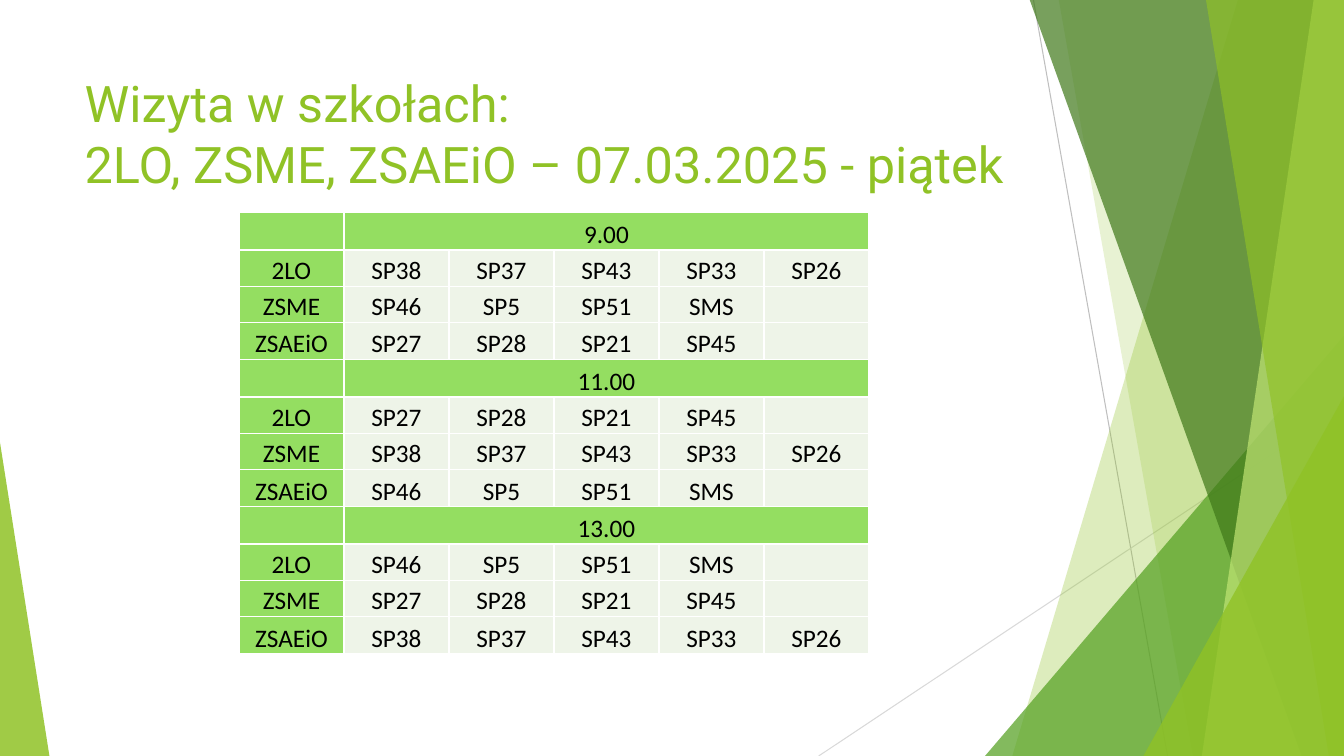
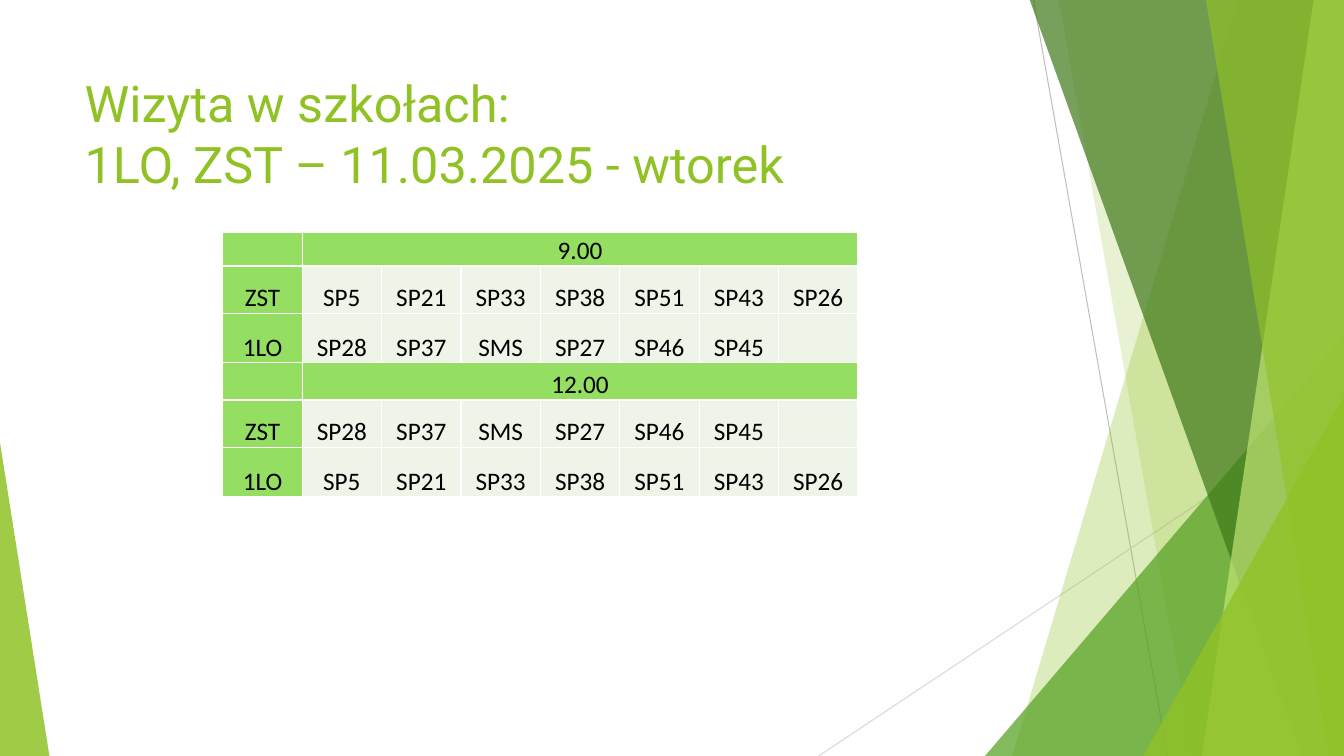
from dataclasses import dataclass

from lxml import etree
from pptx import Presentation
from pptx.dml.color import RGBColor
from pptx.enum.shapes import MSO_CONNECTOR, MSO_SHAPE
from pptx.enum.text import MSO_ANCHOR, MSO_AUTO_SIZE, PP_ALIGN
from pptx.oxml.ns import qn
from pptx.util import Inches, Pt

STRAIGHT = MSO_CONNECTOR.STRAIGHT
TRIANGLE = MSO_SHAPE.ISOSCELES_TRIANGLE
LEFT, CENTER = PP_ALIGN.LEFT, PP_ALIGN.CENTER
TOP, BOTTOM = MSO_ANCHOR.TOP, MSO_ANCHOR.BOTTOM
NO_AUTOFIT = MSO_AUTO_SIZE.NONE


@dataclass(frozen=True)
class Theme:
    lime: str = "90C226"
    green: str = "54A021"
    forest: str = "3F7819"
    pale_lime: str = "C0E474"
    grey: str = "BFBFBF"
    light_grey: str = "D9D9D9"
    header_fill: str = "94DE61"
    body_fill: str = "EEF4E8"
    border: str = "FFFFFF"
    text: str = "000000"
    title_font: str = "Roboto"
    table_font: str = "Calibri"
    title_size: int = 36
    table_size: int = 18
    hairline: float = 0.75
    border_width: int = 1


THEME = Theme()
WIDTH, HEIGHT = 13.33, 7.5
BAND_TOP = -0.01
TITLE_BOX = (0.74, 0.67, 9.4, 1.44)

# Groups of primary schools that visit together
FRIDAY_A = ["SP38", "SP37", "SP43", "SP33", "SP26"]
FRIDAY_B = ["SP46", "SP5", "SP51", "SMS"]
FRIDAY_C = ["SP27", "SP28", "SP21", "SP45"]
TUESDAY_A = ["SP5", "SP21", "SP33", "SP38", "SP51", "SP43", "SP26"]
TUESDAY_B = ["SP28", "SP37", "SMS", "SP27", "SP46", "SP45"]

VISITS = [
    {
        "title": "Wizyta w szkołach:\v2LO, ZSME, ZSAEiO – 07.03.2025 - piątek",
        "hosts": ["2LO", "ZSME", "ZSAEiO"],
        "sessions": [
            ("9.00", [FRIDAY_A, FRIDAY_B, FRIDAY_C]),
            ("11.00", [FRIDAY_C, FRIDAY_A, FRIDAY_B]),
            ("13.00", [FRIDAY_B, FRIDAY_C, FRIDAY_A]),
        ],
        "table_at": (2.37, 2.11),
        "table_width": 6.25,
        "row_heights": [0.37, 0.36, 0.36, 0.37] * 3,
    },
    {
        "title": "Wizyta w szkołach:\v1LO, ZST – 11.03.2025 - wtorek",
        "hosts": ["ZST", "1LO"],
        "sessions": [
            ("9.00", [TUESDAY_A, TUESDAY_B]),
            ("12.00", [TUESDAY_B, TUESDAY_A]),
        ],
        "table_at": (2.21, 2.31),
        "table_width": 6.3,
        "row_heights": [0.33, 0.47, 0.49, 0.37, 0.47, 0.49],
    },
]

# Background, from back to front
RAYS = [
    ((10.25, 0), (11.58, HEIGHT), THEME.grey),
    ((WIDTH, 4.03), (8.12, HEIGHT), THEME.light_grey),
]
# band: top-left x, bottom-left x, colour, opacity in percent
# wedge: left, top, width, apex position, colour, opacity in percent
FACETS = [
    ("band", 12.28, 10.04, THEME.lime, 30),
    ("band", 10.5, 11.83, THEME.lime, 20),
    ("wedge", 9.77, 3.33, 3.56, 1, THEME.green, 72),
    ("band", 10.21, 12.91, THEME.forest, 70),
    ("band", 13.03, 11.92, THEME.pale_lime, 70),
    ("band", 11.96, 13.18, THEME.lime, 65),
    ("wedge", 11.34, 3.93, 1.99, 1, THEME.lime, 80),
    ("wedge", 0, 4.39, 0.49, 0, THEME.lime, 85),
]


def rgb(color):
    return RGBColor.from_string(color)


def inches(*lengths):
    return tuple(Inches(length) for length in lengths)


def add_ray(shapes, start, end, color):
    ray = shapes.add_connector(STRAIGHT, *inches(*start, *end))
    ray.line.color.rgb = rgb(color)
    ray.line.width = Pt(THEME.hairline)
    etree.SubElement(ray.element.spPr, qn("a:effectLst"))
    return ray


def add_band(shapes, top_x, bottom_x):
    outline = shapes.build_freeform(*inches(top_x, BAND_TOP))
    corners = [(WIDTH, BAND_TOP), (WIDTH, HEIGHT), (bottom_x, HEIGHT)]
    outline.add_line_segments([inches(*corner) for corner in corners], close=True)
    return outline.convert_to_shape()


def add_wedge(shapes, left, top, width, apex):
    wedge = shapes.add_shape(TRIANGLE, *inches(left, top, width, HEIGHT - top))
    wedge.adjustments[0] = apex
    return wedge


def add_facet(shapes, kind, *details):
    *geometry, color, opacity = details
    facet = {"band": add_band, "wedge": add_wedge}[kind](shapes, *geometry)
    facet.shadow.inherit = False
    facet.line.fill.background()
    facet.fill.solid()
    facet.fill.fore_color.rgb = rgb(color)
    tint = facet.element.spPr.find(".//" + qn("a:srgbClr"))
    etree.SubElement(tint, qn("a:alpha"), val=str(opacity * 1000))
    return facet


def prepare_layout(layout, slide):
    """Draw the background on a slide, then move it behind the layout's parts."""
    background = [add_ray(slide.shapes, *ray) for ray in RAYS]
    background += [add_facet(slide.shapes, *facet) for facet in FACETS]
    for index, part in enumerate(background, start=2):
        layout.shapes.element.insert(index, part.element)


def style_runs(paragraph, font_name, size, color):
    for run in paragraph.runs:
        run.font.name = font_name
        run.font.size = Pt(size)
        run.font.color.rgb = rgb(color)


def set_title(slide, text):
    title = slide.shapes.title
    title.left, title.top, title.width, title.height = inches(*TITLE_BOX)
    frame = title.text_frame
    frame.text = text
    frame.word_wrap = True
    frame.auto_size = NO_AUTOFIT
    frame.vertical_anchor = TOP
    paragraph = frame.paragraphs[0]
    paragraph.alignment = LEFT
    style_runs(paragraph, THEME.title_font, THEME.title_size, THEME.lime)


def set_cell(cell, text, fill):
    cell.text = text
    cell.vertical_anchor = BOTTOM
    cell.margin_left = cell.margin_right = cell.margin_top = Inches(0.01)
    cell.margin_bottom = 0
    paragraph = cell.text_frame.paragraphs[0]
    paragraph.alignment = CENTER
    style_runs(paragraph, THEME.table_font, THEME.table_size, THEME.text)
    # Borders come before the fill in the cell properties
    properties = cell._tc.get_or_add_tcPr()
    for side in ("lnL", "lnR", "lnT", "lnB"):
        edge = etree.SubElement(
            properties, qn(f"a:{side}"), w=str(Pt(THEME.border_width))
        )
        paint = etree.SubElement(edge, qn("a:solidFill"))
        etree.SubElement(paint, qn("a:srgbClr"), val=THEME.border)
    cell.fill.solid()
    cell.fill.fore_color.rgb = rgb(fill)


def add_schedule(slide, visit):
    # One heading row for each hour, then one row for each host school
    rows = []
    for hour, groups in visit["sessions"]:
        rows.append(["", hour])
        rows += [[host, *group] for host, group in zip(visit["hosts"], groups)]
    columns = max(len(row) for row in rows)
    heights = visit["row_heights"]
    schedule = slide.shapes.add_table(
        len(rows),
        columns,
        *inches(*visit["table_at"], visit["table_width"], sum(heights)),
    ).table
    schedule.first_row = schedule.horz_banding = False
    for row, height in zip(schedule.rows, heights):
        row.height = Inches(height)
    for r, row in enumerate(rows):
        is_heading = not row[0]
        for c in range(columns):
            fill = THEME.header_fill if is_heading or c == 0 else THEME.body_fill
            text = row[c] if c < len(row) else ""
            set_cell(schedule.cell(r, c), text, fill)
        if is_heading:
            schedule.cell(r, 1).merge(schedule.cell(r, columns - 1))


def main():
    deck = Presentation()
    deck.slide_width, deck.slide_height = inches(WIDTH, HEIGHT)
    title_only = deck.slide_layouts[5]
    slides = [deck.slides.add_slide(title_only) for _ in VISITS]
    prepare_layout(title_only, slides[0])
    for slide, visit in zip(slides, VISITS):
        set_title(slide, visit["title"])
        add_schedule(slide, visit)
    deck.save("out.pptx")


if __name__ == "__main__":
    main()
